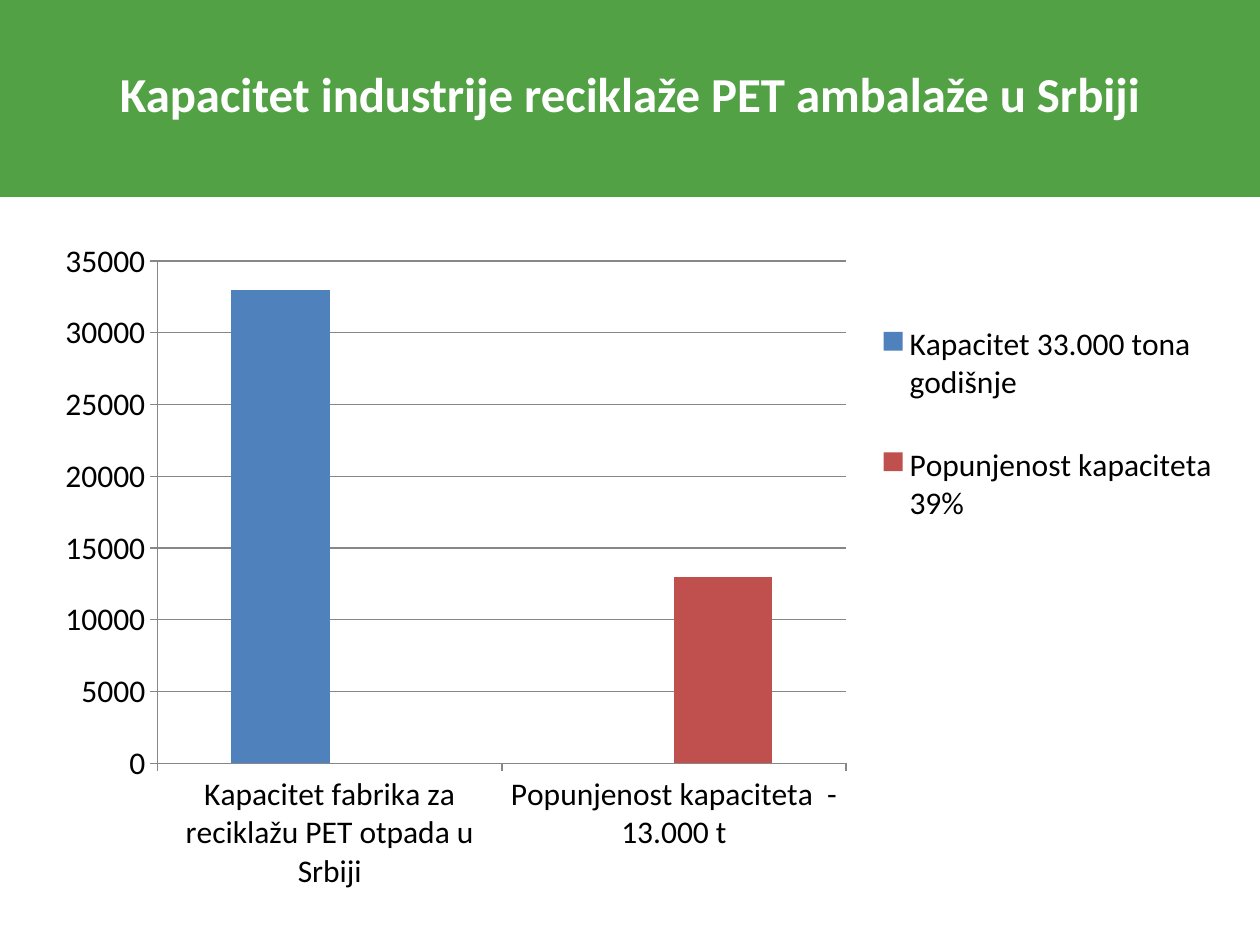
from dataclasses import dataclass

from lxml import etree
from pptx import Presentation
from pptx import util as u
from pptx.chart.data import CategoryChartData
from pptx.dml.color import RGBColor
from pptx.enum import chart as ch, text
from pptx.oxml.ns import qn

PX = u.Inches(1) // 126


@dataclass(frozen=True)
class Theme:
    font: str = "Calibri"
    green: str = "52A145"
    white: str = "FFFFFF"
    black: str = "000000"
    gray: str = "878787"
    bars: tuple = ("4F81BD", "C0504D")
    head: float = 27.9
    body: float = 18


def rgb(code):
    return RGBColor.from_string(code)


def place(node, frame, inner=False):
    old = node.find(qn("c:layout"))
    if old is None:
        old = etree.Element(qn("c:layout"))
        if inner:
            node.insert(0, old)
        else:
            node.find(qn("c:legendPos")).addnext(old)
    box = etree.SubElement(old, qn("c:manualLayout"))
    rules = [("layoutTarget", "inner")] if inner else []
    rules += [("xMode", "edge"), ("yMode", "edge")]
    rules += zip("xywh", frame)
    for tag, val in rules:
        etree.SubElement(box, qn("c:" + tag)).set("val", str(val))


class Deck:
    def __init__(self, theme, wide, high):
        self.theme = theme
        self.prs = Presentation()
        self.prs.slide_width, self.prs.slide_height = wide * PX, high * PX
        self.slide = self.prs.slides.add_slide(self.prs.slide_layouts[5])

    def title(self, words, left, top, wide, high):
        t, box = self.theme, self.slide.shapes.title
        box.left, box.top = left * PX, top * PX
        box.width, box.height = wide * PX, high * PX
        box.fill.solid()
        box.fill.fore_color.rgb = rgb(t.green)
        box.line.color.rgb = rgb(t.green)
        box.line.width = u.Pt(2)
        frame = box.text_frame
        frame.text = words
        frame.word_wrap = True
        frame.auto_size = text.MSO_AUTO_SIZE.NONE
        frame.vertical_anchor = text.MSO_ANCHOR.MIDDLE
        frame.margin_bottom = 15 * PX
        line = frame.paragraphs[0]
        line.alignment = text.PP_ALIGN.CENTER
        font = line.font
        font.name, font.size, font.bold = t.font, u.Pt(t.head), True
        font.color.rgb = rgb(t.white)

    def columns(self, cats, series, left, top, wide, high):
        t, data = self.theme, CategoryChartData()
        data.categories = cats
        for name, vals in series:
            data.add_series(name, vals)
        chart = self.slide.shapes.add_chart(
            ch.XL_CHART_TYPE.COLUMN_CLUSTERED,
            left * PX, top * PX, wide * PX, high * PX, data).chart
        chart.has_title = False
        chart.font.name, chart.font.size = t.font, u.Pt(t.body)
        chart.font.color.rgb = rgb(t.black)
        plot = chart.plots[0]
        plot.gap_width, plot.overlap = 150, 0
        plot.vary_by_categories = False
        for bar, tint in zip(plot.series, t.bars):
            bar.format.fill.solid()
            bar.format.fill.fore_color.rgb = rgb(tint)
        axis = chart.value_axis
        axis.minimum_scale, axis.maximum_scale, axis.major_unit = 0, 35000, 5000
        axis.has_major_gridlines = True
        axis.major_gridlines.format.line.color.rgb = rgb(t.gray)
        for axis in (chart.category_axis, chart.value_axis):
            axis.format.line.color.rgb = rgb(t.gray)
            axis.major_tick_mark = ch.XL_TICK_MARK.OUTSIDE
        chart.has_legend = True
        chart.legend.position = ch.XL_LEGEND_POSITION.RIGHT
        chart.legend.include_in_layout = False
        area = chart._chartSpace.chart.plotArea
        place(area, (0.1, 0.05, 0.58, 0.74), inner=True)
        place(chart.legend._element, (0.7, 0.08, 0.3, 0.42))

    def save(self):
        self.prs.save("out.pptx")


def main():
    deck = Deck(Theme(), 1260, 945)
    deck.title("Kapacitet industrije reciklaže PET ambalaže u Srbiji",
               0, 0, 1260, 195)
    deck.columns(
        ["Kapacitet fabrika za reciklažu PET otpada u Srbiji",
         "Popunjenost kapaciteta  - 13.000 t"],
        [("Kapacitet 33.000 tona godišnje", (33000, None)),
         ("Popunjenost kapaciteta 39%", (None, 13000))],
        39, 227, 1187, 679)
    deck.save()


if __name__ == "__main__":
    main()
